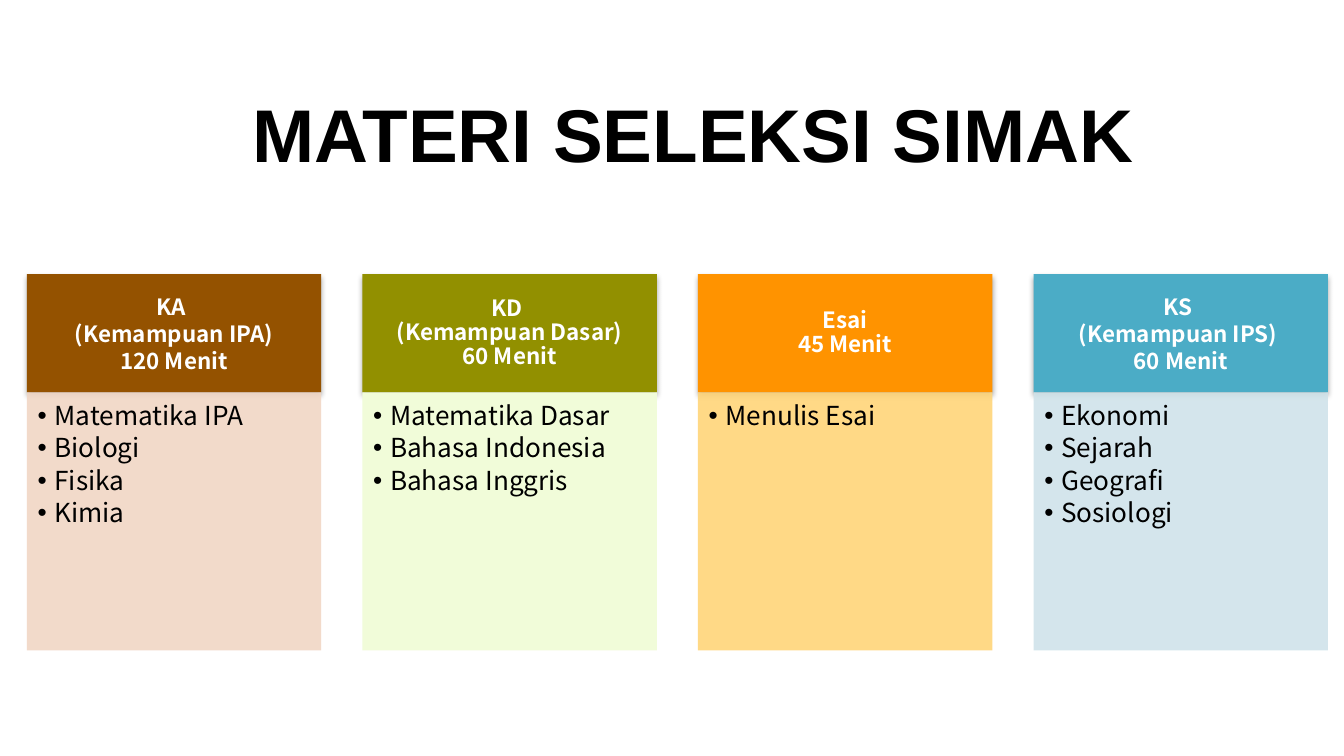
from dataclasses import dataclass

from lxml import etree
from pptx import Presentation
from pptx.dml.color import RGBColor
from pptx.enum.shapes import MSO_SHAPE
from pptx.enum.text import MSO_ANCHOR, PP_ALIGN
from pptx.oxml.ns import qn
from pptx.util import Inches, Pt

RECT = MSO_SHAPE.RECTANGLE
TOP, MIDDLE = MSO_ANCHOR.TOP, MSO_ANCHOR.MIDDLE
LEFT, CENTER = PP_ALIGN.LEFT, PP_ALIGN.CENTER


@dataclass(frozen=True)
class Theme:
    black: str = "000000"
    white: str = "FFFFFF"
    title_font: str = "Arial"
    font: str = "Noto Sans CJK KR"
    title: int = 40
    head: int = 12
    item: int = 14


theme = Theme()


def add_box(top, height, color, margins, anchor):
    """Add a plain rectangle in the current column; return it with its text frame."""
    box = slide.shapes.add_shape(RECT, Inches(left), Inches(top), Inches(width), Inches(height))
    box.shadow.inherit = False
    box.fill.solid()
    box.fill.fore_color.rgb = RGBColor.from_string(color)
    box.line.fill.background()
    frame = box.text_frame
    frame.word_wrap = True
    frame.vertical_anchor = anchor
    (frame.margin_left, frame.margin_top,
     frame.margin_right, frame.margin_bottom) = map(Inches, margins)
    return box, frame


def add_line(frame, index, text, font, size, color, bold, align):
    """Write one paragraph of a text frame and return it."""
    para = frame.add_paragraph() if index else frame.paragraphs[0]
    para.alignment = align
    run = para.add_run()
    run.text = text
    run.font.name = font
    run.font.size = Pt(size)
    run.font.bold = bold
    run.font.color.rgb = RGBColor.from_string(color)
    return para


# Head color, body color, body opacity in percent, head line spacing, head lines, items
columns = [
    ("945200", "F1D7C5", 90, 1.0, ["KA ", "(Kemampuan IPA)", "120 Menit"],
     ["Matematika IPA", "Biologi", "Fisika", "Kimia"]),
    ("929000", "F1FCD9", 100, 0.9, ["KD ", "(Kemampuan Dasar)", "60 Menit"],
     ["Matematika Dasar", "Bahasa Indonesia", "Bahasa Inggris"]),
    ("FF9300", "FFD579", 90, 0.9, ["Esai", "45 Menit"],
     ["Menulis Esai"]),
    ("4BACC6", "D0E3EA", 90, 1.0, ["KS ", "(Kemampuan IPS) ", "60 Menit"],
     ["Ekonomi", "Sejarah", "Geografi", "Sosiologi"]),
]

prs = Presentation()
prs.slide_width = Inches(10)
prs.slide_height = Inches(10 * 9 / 16)
slide = prs.slides.add_slide(prs.slide_layouts[6])

title = slide.shapes.add_textbox(Inches(1.06), Inches(0.34), Inches(8.19), Inches(1.29)).text_frame
title.word_wrap = True
title.vertical_anchor = MIDDLE
add_line(title, 0, "MATERI SELEKSI SIMAK", theme.title_font, theme.title, theme.black, True, CENTER)

start, end, width = 0.2, 9.88, 2.19
step = (end - width - start) / (len(columns) - 1)
head_top, head_height, body_height = 2.04, 0.88, 1.92
indent = Inches(1 / 8)

for col, (dark, light, alpha, spacing, heads, items) in enumerate(columns):
    left = start + col * step

    head, frame = add_box(head_top, head_height, dark, (0.09, 0.05, 0.09, 0.05), MIDDLE)
    effects = head._element.spPr.find(qn("a:effectLst"))
    shadow = etree.SubElement(effects, qn("a:outerShdw"), blurRad=str(Pt(3.1)),
                              dist=str(Pt(1.8)), dir="5400000", rotWithShape="0")
    shade = etree.SubElement(shadow, qn("a:srgbClr"), val=theme.black)
    etree.SubElement(shade, qn("a:alpha"), val="35000")
    for i, text in enumerate(heads):
        para = add_line(frame, i, text, theme.font, theme.head, theme.white, True, CENTER)
        para.line_spacing = spacing

    body, frame = add_box(head_top + head_height, body_height, light, (0.08, 0.08, 0.11, 0.12), TOP)
    if alpha < 100:
        tint = body.fill._xPr.find(".//" + qn("a:srgbClr"))
        etree.SubElement(tint, qn("a:alpha"), val=str(alpha * 1000))
    for i, item in enumerate(items):
        para = add_line(frame, i, item, theme.font, theme.item, theme.black, False, LEFT)
        props = para._p.get_or_add_pPr()
        props.set("marL", str(indent))
        props.set("indent", str(-indent))
        etree.SubElement(props, qn("a:buFont"), typeface=theme.title_font)
        etree.SubElement(props, qn("a:buChar"), char="•")
        para.line_spacing = 0.9
        para.space_after = Pt(0.15 * theme.item)

prs.save("out.pptx")
